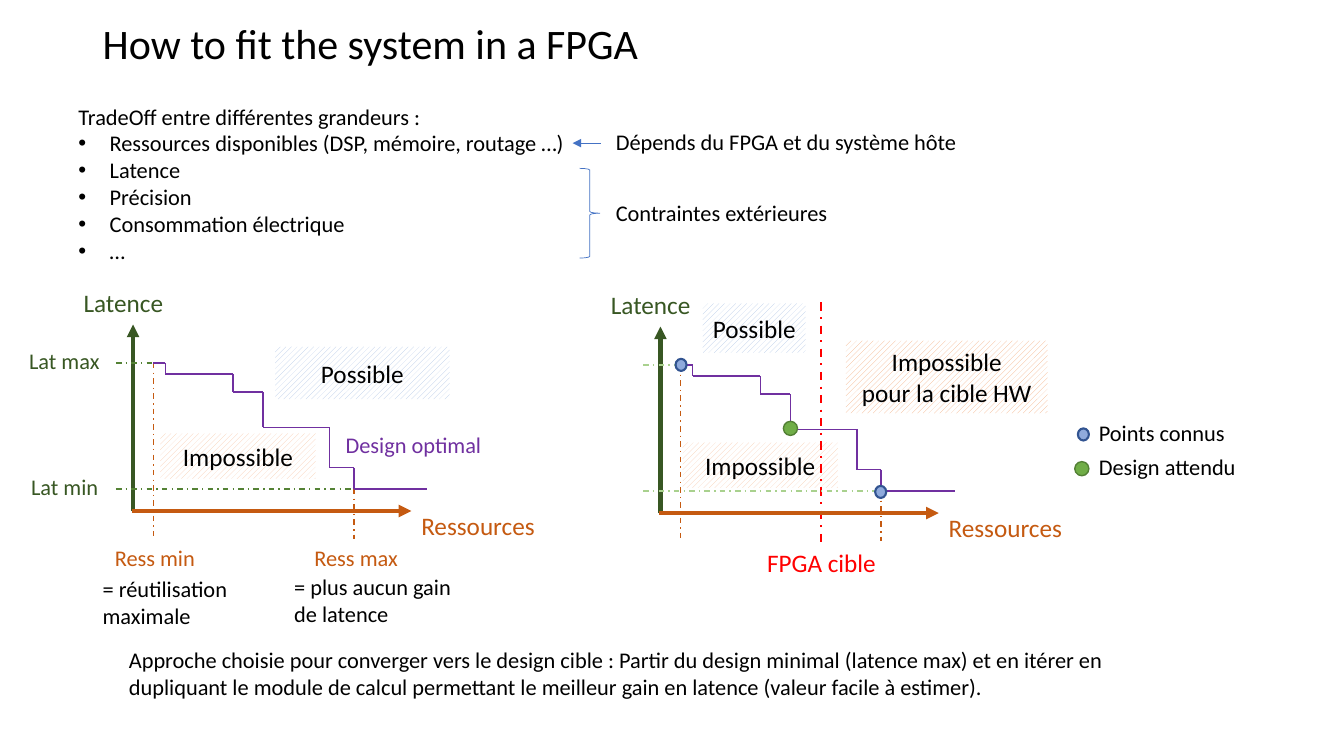
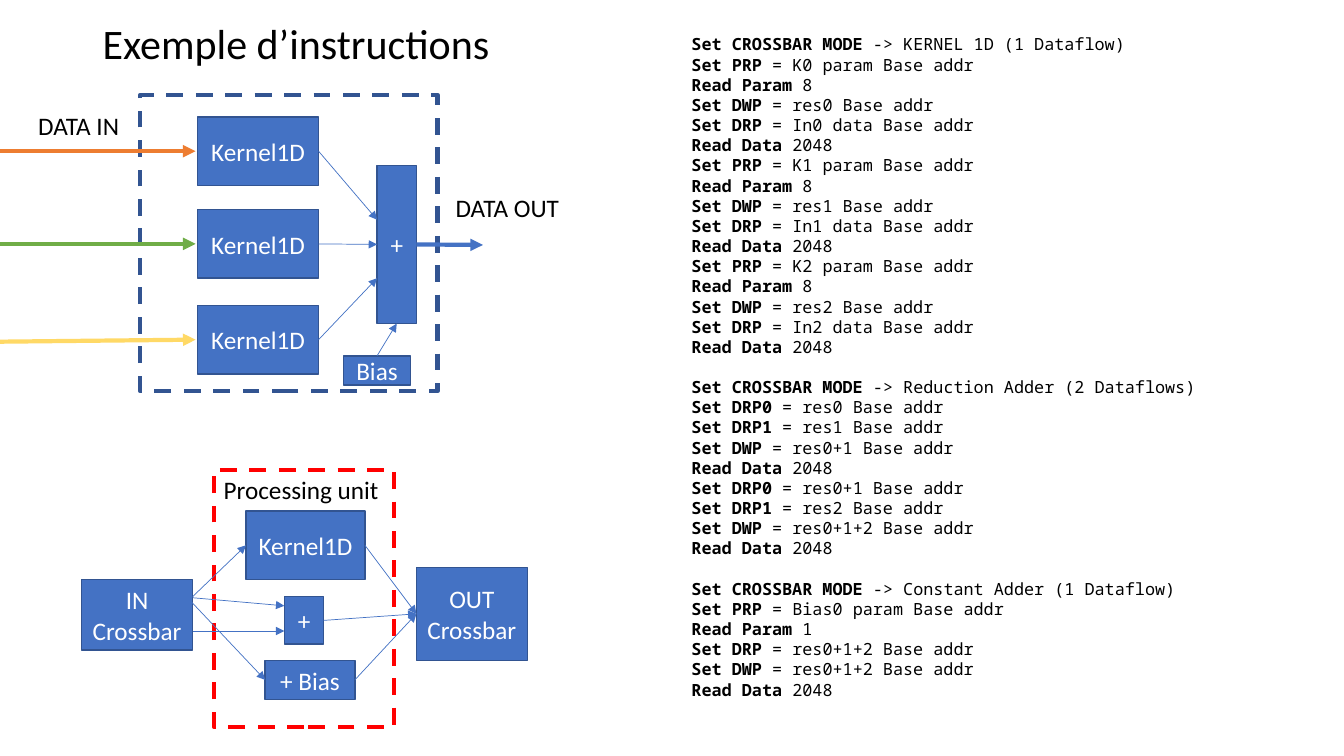
"""Build two slides on fitting a system in an FPGA and on its instructions."""
from lxml import etree
from pptx import Presentation
from pptx.dml.color import RGBColor
from pptx.enum import dml, shapes, text
from pptx.oxml.ns import qn
from pptx.util import Emu, Inches, Pt

BLACK, WHITE, RED = "000000", "FFFFFF", "FF0000"
BLUE, NAVY, SKY = "4472C4", "325491", "8FAADC"
GREEN, FOREST, LIME = "70AD47", "385723", "538035"
RUST, PURPLE = "C55A11", "7030A0"
RECT = shapes.MSO_SHAPE.RECTANGLE
OVAL = shapes.MSO_SHAPE.OVAL
BRACE = shapes.MSO_SHAPE.RIGHT_BRACE
DASH, DASH_DOT = dml.MSO_LINE.DASH, dml.MSO_LINE.DASH_DOT
MIDDLE, TOP = text.MSO_ANCHOR.MIDDLE, text.MSO_ANCHOR.TOP
CENTER = text.PP_ALIGN.CENTER

deck = Presentation()
deck.slide_width, deck.slide_height = Inches(13.33), Inches(7.5)
CELL = deck.slide_height / 75


def rgb(code):
    return RGBColor.from_string(code)


def write(page, words, at, size=18, color=BLACK, font="Calibri", align=None,
          anchor=TOP, spacing=None, gap=0, bullets=False, shape=None,
          fill=None, hatch=None, edge=None, weight=1, dash=None):
    area = [Emu(round(cells * CELL)) for cells in at]
    if shape is None:
        box = page.shapes.add_textbox(*area)
    else:
        box = page.shapes.add_shape(shape, *area)
        box.shadow.inherit = False
        if hatch:
            box.fill.patterned()
            box.fill.pattern = dml.MSO_PATTERN.WIDE_UPWARD_DIAGONAL
            box.fill.fore_color.rgb = rgb(hatch)
            box.fill.back_color.rgb = rgb(WHITE)
        elif fill:
            box.fill.solid()
            box.fill.fore_color.rgb = rgb(fill)
        else:
            box.fill.background()
        if edge:
            box.line.color.rgb = rgb(edge)
            box.line.width = Pt(weight)
            box.line.dash_style = dash
        else:
            box.line.fill.background()
    frame = box.text_frame
    frame.word_wrap = True
    frame.vertical_anchor = anchor
    rows = [(row, block and not place)
            for block, lines in enumerate(words.split("\n\n"))
            for place, row in enumerate(lines.split("\n"))]
    for number, (row, opens_block) in enumerate(rows):
        para = frame.add_paragraph() if number else frame.paragraphs[0]
        para.alignment = align or text.PP_ALIGN.LEFT
        if spacing:
            para.line_spacing = spacing
        if opens_block:
            para.space_before = Pt(gap)
        if bullets and number:
            layout = para._p.get_or_add_pPr()
            layout.set("marL", str(Inches(0.31)))
            layout.set("indent", str(-Inches(0.31)))
            etree.SubElement(layout, qn("a:buFont")).set("typeface", "Arial")
            etree.SubElement(layout, qn("a:buChar")).set("char", "•")
        parts = row.split("|") if row else []
        for place, part in enumerate(parts):
            span = para.add_run()
            span.text = part
            span.font.name = font
            span.font.size = Pt(size)
            span.font.bold = place < len(parts) - 1
            span.font.color.rgb = rgb(color)
    return box


pages = []
for title in ("How to fit the system in a FPGA", "Exemple d’instructions"):
    page = deck.slides.add_slide(deck.slide_layouts[6])
    write(page, title, (9.2, 0, 115, 9.2), size=30, anchor=MIDDLE, spacing=0.9)
    pages.append(page)
tradeoff, example = pages

for words, at, hatch in (
        ("Impossible", (15.9, 43, 15.4, 4.5), "F8CBAD"),
        ("Possible", (27.3, 34.4, 17.3, 5.2), "B4C7E7"),
        ("Impossible", (67.7, 43.9, 15.4, 4.5), "F8CBAD"),
        ("Possible", (69.7, 30.1, 10.2, 4.9), "B4C7E7"),
        ("Impossible\npour la cible HW", (83.9, 33.8, 20, 7.2), "F4B183")):
    write(tradeoff, words, at, shape=RECT, hatch=hatch, align=CENTER,
          anchor=MIDDLE)
write(tradeoff, "", (57.5, 16.7, 2, 8.9), shape=BRACE, edge=BLUE, weight=0.5)

block = dict(shape=RECT, fill=BLUE, edge=NAVY, color=WHITE, align=CENTER,
             anchor=MIDDLE)
blocks = {}
for name, words, at in (
        ("kernel 0", "Kernel1D", (19.6, 11.6, 12, 6.8)),
        ("kernel 1", "Kernel1D", (19.6, 20.8, 12, 6.8)),
        ("kernel 2", "Kernel1D", (19.6, 30.3, 12, 6.8)),
        ("sum", "+", (37.4, 16.4, 3.9, 15.7)),
        ("bias", "Bias", (34.1, 35.3, 6.6, 2.9)),
        ("in", "IN Crossbar", (8.1, 57.5, 11, 7)),
        ("out", "OUT Crossbar", (41.3, 56.3, 11, 9.2)),
        ("unit kernel", "Kernel1D", (24.4, 50.7, 11.8, 6.8)),
        ("unit sum", "+", (28.2, 59.2, 3.9, 4.7)),
        ("unit bias", "+ Bias", (26.3, 65.5, 8.9, 3.9))):
    blocks[name] = write(example, words, at, **block)
for words, at, edge in (("", (13.9, 9.4, 29.5, 29.4), NAVY),
                        ("Processing unit", (21.2, 46.6, 17.9, 25.5), RED)):
    write(example, words, at, shape=RECT, edge=edge, weight=3, dash=DASH)

thin_arrow = (BLUE, 0.5, None, True)
rust_guide = (RUST, 1, DASH_DOT, False)
wires = [(tradeoff, (59.6, 14.2), (56.8, 14.2), thin_arrow),
         (tradeoff, (81.4, 30), (81.4, 54.1), (RED, 1.5, DASH_DOT, False))]
levels = [(15.2, 36), (16.4, 37.1), (23.1, 38.9), (26.1, 42.4), (32.7, 46.4),
          (35.1, 48.5), (42.4, 48.5)]
stairs = levels[:1]
for (_, high), (across, low) in zip(levels, levels[1:]):
    stairs += [(across, high), (across, low)]
stairs.pop()
for right, down, guide in ((0, 0, "548235"), (52.3, 0.2, "A9D18E")):
    level_guide = (guide, 1, DASH_DOT, False)
    routes = [((13.2, 50.7), (13.2, 32.2), (FOREST, 3, None, True)),
              ((13.1, 50.7), (40.8, 50.7), (RUST, 3, None, True)),
              ((11.5, 48.5), (35.1, 48.5), level_guide),
              ((11.5, 36), (15.2, 36), level_guide),
              ((15.2, 36), (15.2, 53.5), rust_guide),
              ((35.1, 48.5), (35.1, 53.5), rust_guide)]
    routes += [(start, end, (PURPLE, 1, None, False))
               for start, end in zip(stairs, stairs[1:])]
    for (x1, y1), (x2, y2), style in routes:
        wires.append((tradeoff, (x1 + right, y1 + down),
                      (x2 + right, y2 + down), style))
    write(tradeoff, "Latence", (7.3 + right, 28 + down, 11.2, 4), color=FOREST)
    write(tradeoff, "Ressources", (40.8 + right, 50.1 + down, 15.2, 4),
          color=RUST)

for start, end, style in (
        (("kernel 0", 3), (37.4, 21.8), thin_arrow),
        (("kernel 1", 3), ("sum", 1), thin_arrow),
        (("kernel 2", 3), (37.4, 27.6), thin_arrow),
        (("bias", 0), ("sum", 2), thin_arrow),
        (("sum", 3), (47.9, 24.3), (BLUE, 3, None, True)),
        ((0, 15), (19.4, 15), ("ED7D31", 3, None, True)),
        ((0, 24.2), (19.4, 24.2), (GREEN, 3, None, True)),
        ((0, 33.9), (19.4, 33.7), ("FFD966", 3, None, True)),
        ((19.1, 59.2), ("unit kernel", 1), thin_arrow),
        ((19.1, 59.3), (28.2, 60.1), thin_arrow),
        ((19.1, 62.6), (28.2, 62.6), thin_arrow),
        ((18.5, 59.2), ("unit bias", 1), thin_arrow),
        (("unit kernel", 3), ("out", 1), thin_arrow),
        (("unit sum", 3), ("out", 1), thin_arrow),
        (("unit bias", 3), ("out", 1), thin_arrow)):
    wires.append((example, start, end, style))

for page, start, end, (color, weight, dash, arrow) in wires:
    points = [(0, 0) if point[0] in blocks else point for point in (start, end)]
    wire = page.shapes.add_connector(
        shapes.MSO_CONNECTOR.STRAIGHT,
        *[Emu(round(cells * CELL)) for point in points for cells in point])
    if start[0] in blocks:
        wire.begin_connect(blocks[start[0]], start[1])
    if end[0] in blocks:
        wire.end_connect(blocks[end[0]], end[1])
    wire.line.color.rgb = rgb(color)
    wire.line.width = Pt(weight)
    wire.line.dash_style = dash
    outline = wire._element.spPr
    if arrow:
        tip = etree.SubElement(outline.find(qn("a:ln")), qn("a:tailEnd"))
        tip.set("type", "triangle")
    etree.SubElement(outline, qn("a:effectLst"))

known = dict(fill=SKY, edge=NAVY, weight=1.5)
expected = dict(fill=GREEN, edge=LIME)
for at, look in (((67, 35.6, 1.1, 1.2), known),
                 ((86.8, 48.2, 1.1, 1.2), known),
                 ((106.9, 42.5, 1.1, 1.2), known),
                 ((77.7, 41.8, 1.4, 1.4), expected),
                 ((106.6, 45.8, 1.4, 1.4), expected)):
    write(tradeoff, "", at, shape=OVAL, **look)

write(tradeoff, "TradeOff entre différentes grandeurs :\n"
      "Ressources disponibles (DSP, mémoire, routage …)\n"
      "Latence\nPrécision\nConsommation électrique\n…",
      (6.8, 9.7, 51.3, 19.9), size=16, bullets=True)
for words, at, color in (
        ("Lat max", (1.9, 33.9, 10.1, 3.7), FOREST),
        ("Lat min", (2.1, 46.4, 9.5, 3.7), FOREST),
        ("Ress min", (10.4, 53.5, 21.1, 3.7), RUST),
        ("Ress max", (30.2, 53.5, 21.1, 3.7), RUST),
        ("Design optimal", (33.3, 42.3, 20.9, 3.7), PURPLE),
        ("Dépends du FPGA et du système hôte", (60.1, 12.2, 51.3, 3.7), BLACK),
        ("Contraintes extérieures", (60.1, 19.3, 51.3, 3.7), BLACK),
        ("= réutilisation maximale", (9.2, 56.6, 17.6, 6.4), BLACK),
        ("= plus aucun gain de latence", (28.2, 56.4, 17.6, 6.4), BLACK),
        ("Points connus", (108, 41.1, 23, 3.7), BLACK),
        ("Design attendu", (108, 44.5, 20.3, 3.7), BLACK),
        ("Approche choisie pour converger vers le design cible : Partir du "
         "design minimal (latence max) et en itérer en dupliquant le module "
         "de calcul permettant le meilleur gain en latence (valeur facile à "
         "estimer).", (11.8, 63.6, 102.8, 6.4), BLACK)):
    write(tradeoff, words, at, size=16, color=color)
write(tradeoff, "FPGA cible", (75.1, 53.8, 15.2, 4), color=RED)

write(example, "DATA IN", (2.8, 10.5, 19.5, 4))
write(example, "DATA OUT", (44.2, 18.6, 19.5, 4))
listing = "Set CROSSBAR MODE |-> KERNEL 1D (1 Dataflow)"
for number in range(3):
    listing += f"""
Set PRP |= K{number} param Base addr
Read Param |8
Set DWP |= res{number} Base addr
Set DRP |= In{number} data Base addr
Read Data |2048"""
listing += "\n\nSet CROSSBAR MODE |-> Reduction Adder (2 Dataflows)"
for first, second, total in (("res0", "res1", "res0+1"),
                             ("res0+1", "res2", "res0+1+2")):
    listing += f"""
Set DRP0 |= {first} Base addr
Set DRP1 |= {second} Base addr
Set DWP |= {total} Base addr
Read Data |2048"""
listing += """

Set CROSSBAR MODE |-> Constant Adder (1 Dataflow)
Set PRP |= Bias0 param Base addr
Read Param |1
Set DRP |= res0+1+2 Base addr
Set DWP |= res0+1+2 Base addr
Read Data |2048"""
write(example, listing, (67.6, 2.9, 53.2, 67.7), size=12,
      font="Noto Sans Mono", gap=14.4)

deck.save("out.pptx")
